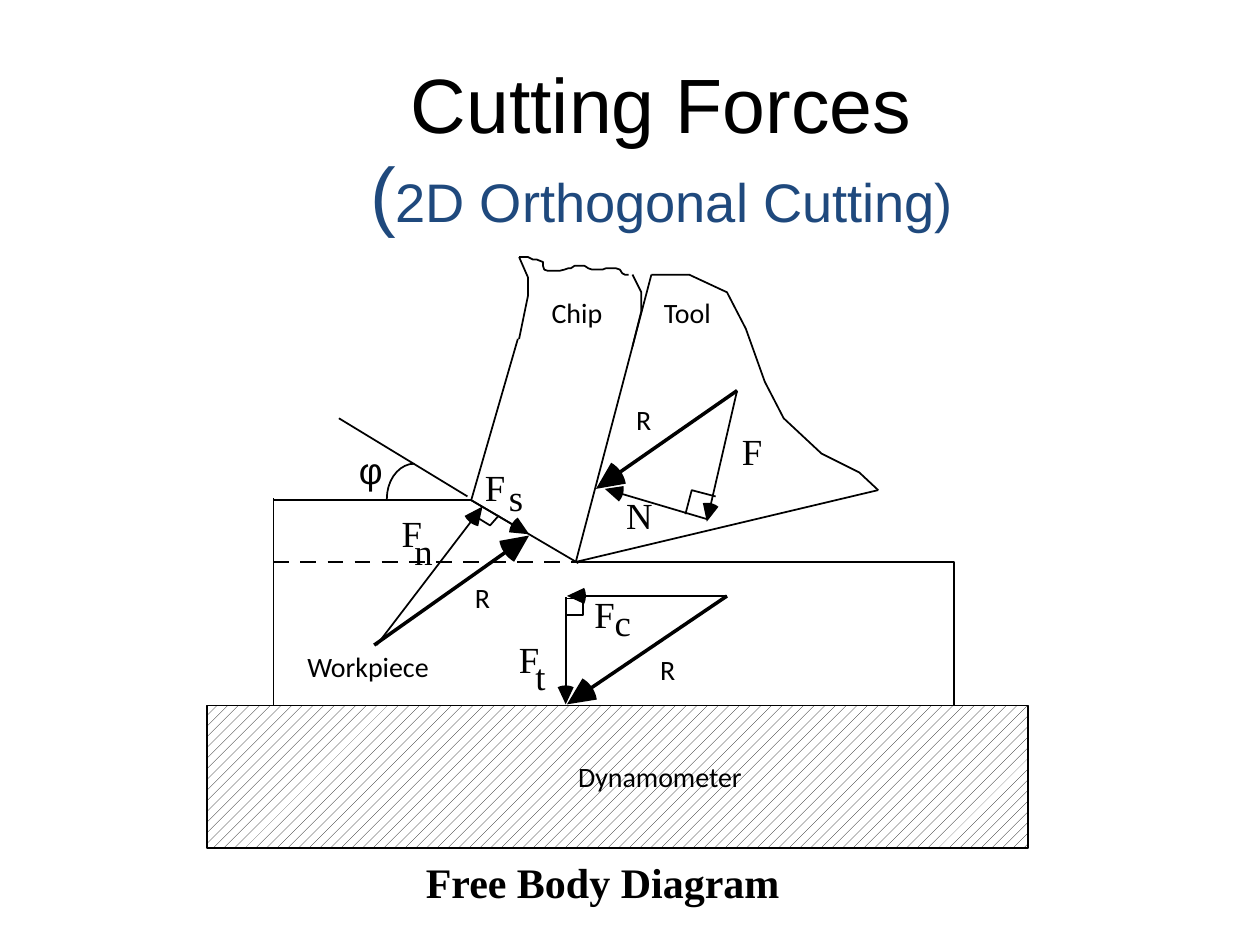
import math
import lxml.etree
import pptx
import pptx.dml.color
import pptx.enum.dml
import pptx.enum.shapes
import pptx.enum.text
import pptx.oxml.ns
import pptx.util

COLORS = {"ink": "000000", "paper": "FFFFFF", "subtitle": "1F497D"}
RGB = {name: pptx.dml.color.RGBColor.from_string(code) for name, code in COLORS.items()}
qn = pptx.oxml.ns.qn

deck = pptx.Presentation()
deck.slide_width = pptx.util.Inches(10)
deck.slide_height = pptx.util.Inches(7.5)
page = deck.slides.add_slide(deck.slide_layouts[5])

# Grid of 1000 columns by 750 rows; all positions below are in cells
CELL = deck.slide_width // 1000


def draw_line(start, end, weight=1):
    ends = [round(value * CELL) for value in (*start, *end)]
    line = page.shapes.add_connector(pptx.enum.shapes.MSO_CONNECTOR.STRAIGHT, *ends)
    line.line.color.rgb = RGB["ink"]
    line.line.width = pptx.util.Pt(weight)
    lxml.etree.SubElement(line._element.spPr, qn("a:effectLst"))
    return line


def draw_outline(points, solid=False):
    corners = [(round(x * CELL), round(y * CELL)) for x, y in points]
    builder = page.shapes.build_freeform(*corners[0])
    builder.add_line_segments(corners[1:], close=solid)
    shape = builder.convert_to_shape()
    shape.shadow.inherit = False
    if solid:
        shape.fill.solid()
        shape.fill.fore_color.rgb = RGB["ink"]
        shape.line.fill.background()
    else:
        shape.fill.background()
        shape.line.color.rgb = RGB["ink"]
        shape.line.width = pptx.util.Pt(1)


# Title
title = page.shapes.title
title.left, title.top, title.width, title.height = (n * CELL for n in (286, 46, 478, 148))
frame = title.text_frame
frame.auto_size = pptx.enum.text.MSO_AUTO_SIZE.NONE
frame.word_wrap = False
frame.vertical_anchor = pptx.enum.text.MSO_ANCHOR.TOP
frame.margin_left = frame.margin_right = 7 * CELL
frame.margin_top = frame.margin_bottom = 3 * CELL
para = frame.paragraphs[0]
para.alignment = pptx.enum.text.PP_ALIGN.CENTER
para.line_spacing = 0.97
for text, size, color in [
    ("Cutting Forces", 44, "ink"),
    ("(", 44, "subtitle"),
    ("2D Orthogonal Cutting)", 31, "subtitle"),
]:
    span = para.add_run()
    span.text = text
    span.font.name = "Arial"
    span.font.size = pptx.util.Pt(size)
    span.font.color.rgb = RGB[color]
    if text == "Cutting Forces":
        para.add_line_break()

# Dynamometer block and the right-angle mark between Fc and Ft
for left, top, width, height, hatched in [
    (164, 560, 652, 113, True),
    (449, 475, 14, 13, False),
]:
    box = page.shapes.add_shape(
        pptx.enum.shapes.MSO_SHAPE.RECTANGLE,
        left * CELL, top * CELL, width * CELL, height * CELL)
    box.shadow.inherit = False
    if hatched:
        box.fill.patterned()
        box.fill.pattern = pptx.enum.dml.MSO_PATTERN.PERCENT_20
        box.fill.fore_color.rgb = RGB["ink"]
        box.fill.back_color.rgb = RGB["paper"]
    else:
        box.fill.solid()
        box.fill.fore_color.rgb = RGB["paper"]
    box.line.color.rgb = RGB["ink"]
    box.line.width = pptx.util.Pt(1)

# Outlines of tool, workpiece and chip, then the angle marks
shear_arc = [
    (329 - 22 * math.cos(math.radians(a)), 396 - 28 * math.sin(math.radians(a)))
    for a in range(0, 91, 10)
]
for points in [
    [(517, 218), (457, 446), (697, 389)],
    [(517, 218), (547, 218), (577, 232), (592, 261), (607, 303), (622, 332),
     (652, 360), (682, 375), (697, 389)],
    [(457, 446), (757, 446), (757, 560), (217, 560), (217, 395)],
    [(412, 269), (419, 235), (419, 220), (412, 204)],
    [(502, 275), (509, 247), (509, 232), (502, 218)],
    [(412, 204), (419, 204), (423, 206), (426, 206), (431, 208), (431, 211),
     (432, 214), (435, 215), (444, 215), (448, 214), (451, 213), (453, 213),
     (456, 211), (464, 211), (467, 213), (470, 214), (478, 214), (481, 213),
     (489, 213), (492, 214), (494, 217), (496, 218), (499, 218)],
    [(376, 409), (389, 417), (396, 409)],
    [(544, 408), (549, 389), (568, 394)],
    shear_arc,
]:
    draw_outline(points)

# Workpiece surface, chip back, shear plane and its extension
for start, end in [
    ((217, 397), (374, 397)),
    ((411, 269), (374, 397)),
    ((459, 447), (374, 397)),
    ((371, 394), (269, 332)),
]:
    draw_line(start, end)

# Dashed depth of cut
depth = draw_line((217, 446), (457, 446))
dashes = lxml.etree.SubElement(depth.line._get_or_add_ln(), qn("a:custDash"))
lxml.etree.SubElement(dashes, qn("a:ds"), d="910000", sp="650000")

# Force vectors: tail, tip, line weight, length of the wedge-shaped head
for tail, tip, weight, head in [
    ((585, 310), (473, 388), 2, 24),  # R on tool
    ((297, 512), (420, 425), 2, 24),  # R on workpiece
    ((577, 473), (450, 559), 2, 24),  # R on dynamometer
    ((577, 473), (450, 473), 1, 15),  # Fc
    ((449, 474), (449, 559), 1, 15),  # Ft
    ((299, 512), (383, 402), 1, 16),  # Fn
    ((374, 397), (420, 424), 1, 16),  # Fs
    ((561, 412), (480, 388), 1, 15),  # N
    ((585, 310), (561, 414), 1, 15),  # F
]:
    back = math.atan2(tail[1] - tip[1], tail[0] - tip[0])
    neck = (tip[0] + 0.8 * head * math.cos(back), tip[1] + 0.8 * head * math.sin(back))
    draw_line(tail, neck, weight)
    rim = [back + math.radians(a) for a in range(-25, 26, 5)]
    draw_outline([tip] + [
        (tip[0] + head * math.cos(a), tip[1] + head * math.sin(a)) for a in rim
    ], solid=True)

# Labels, grouped by style: font, size, bold, line spacing, side and top inset, height
for font, size, bold, spacing, side, top_inset, height, labels in [
    ("Calibri", 16, False, 0.9, 10, 5, 34, [
        ("Tool", 517, 233, 72), ("Workpiece", 234, 514, 142), ("Chip", 428, 233, 74),
        ("Dynamometer", 449, 601, 185), ("R", 495, 318, 36), ("R", 367, 459, 36),
        ("R", 514, 516, 36)]),
    ("Times New Roman", 21, False, 0.9, 10, 5, 42, [
        ("F", 462, 469, 36), ("c", 478, 475, 33), ("F", 402, 504, 36),
        ("t", 415, 518, 28), ("F", 375, 368, 36), ("s", 394, 376, 31),
        ("F", 309, 404, 36), ("n", 319, 419, 35), ("N", 487, 390, 41),
        ("F", 579, 339, 36)]),
    ("Arial", 21, False, 0.9, 10, 5, 42, [("φ", 275, 354, 35)]),
    ("Times New Roman", 24, True, 0.85, 7, 3, 40, [("Free Body Diagram", 331, 683, 296)]),
]:
    for text, left, top, width in labels:
        box = page.shapes.add_textbox(left * CELL, top * CELL, width * CELL, height * CELL)
        frame = box.text_frame
        frame.word_wrap = False
        frame.margin_left = frame.margin_right = side * CELL
        frame.margin_top = frame.margin_bottom = top_inset * CELL
        para = frame.paragraphs[0]
        para.line_spacing = spacing
        span = para.add_run()
        span.text = text
        span.font.name = font
        span.font.size = pptx.util.Pt(size)
        span.font.bold = bold
        span.font.color.rgb = RGB["ink"]

deck.save("out.pptx")
